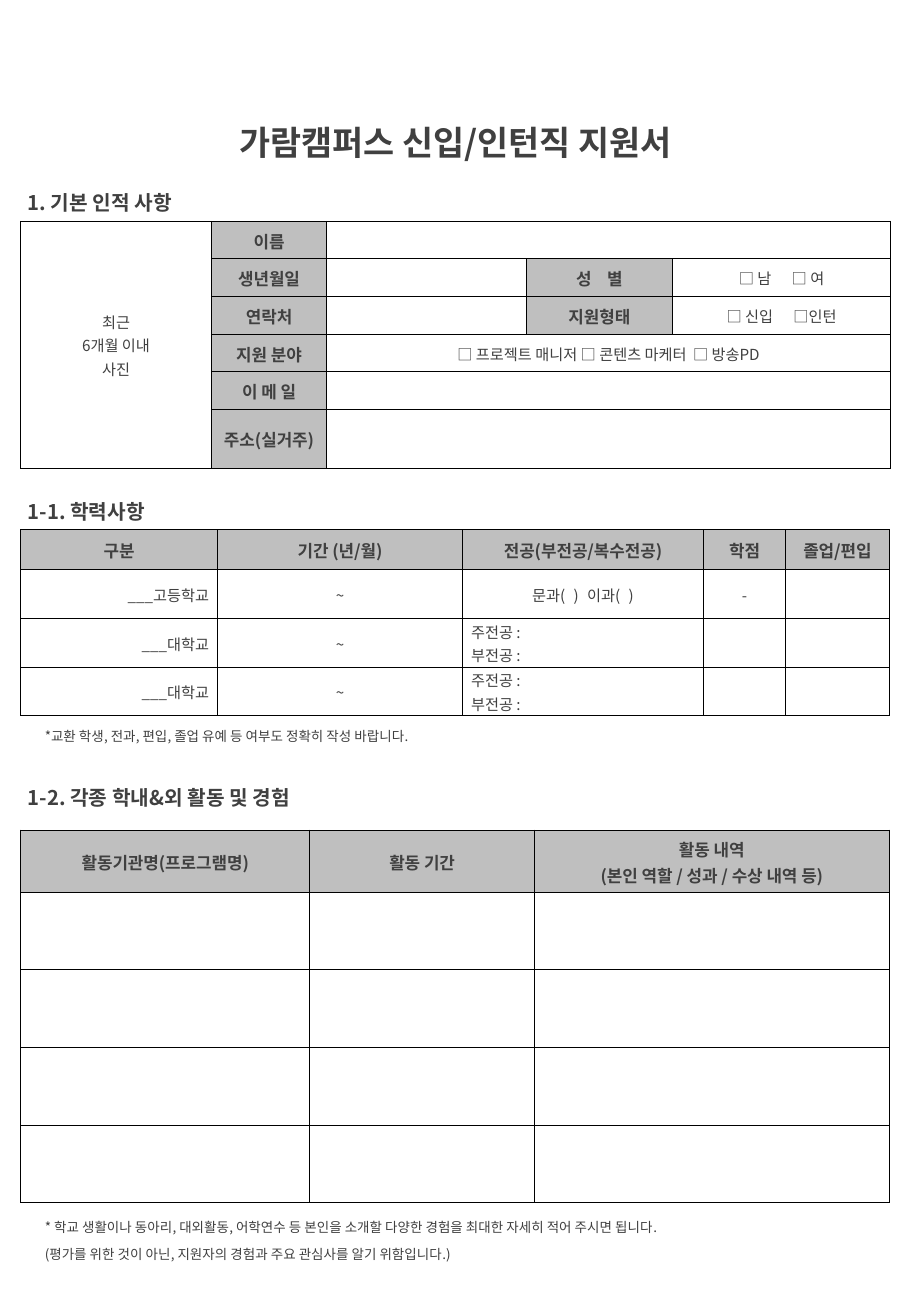
from lxml import etree
from pptx import Presentation
from pptx import util as u
from pptx.dml.color import RGBColor
from pptx.enum import text
from pptx.oxml import ns

PX = 9144
FONT = "Noto Sans CJK KR"
COLORS = {"ink": "404040", "label": "BFBFBF", "border": "000000"}
LEFT, CENTER, RIGHT, JUSTIFY = (
    text.PP_ALIGN.LEFT, text.PP_ALIGN.CENTER, text.PP_ALIGN.RIGHT, text.PP_ALIGN.JUSTIFY)


def px(value):
    return u.Emu(value * PX)


class Form:
    def __init__(self, width, height):
        self.deck = Presentation()
        self.deck.slide_width, self.deck.slide_height = px(width), px(height)
        self.page = self.deck.slides.add_slide(self.deck.slide_layouts[5])

    def style(self, span, size, bold):
        span.font.size, span.font.bold, span.font.name = u.Pt(size), bold, FONT
        span.font.color.rgb = RGBColor.from_string(COLORS["ink"])
        east = etree.SubElement(span._r.get_or_add_rPr(), ns.qn("a:ea"))
        east.set("typeface", FONT)

    def set_text(self, frame, wording, size, bold, align):
        frame.text = wording
        frame.word_wrap = True
        for para in frame.paragraphs:
            para.alignment = align
            for span in para.runs:
                self.style(span, size, bold)

    def title(self, wording, x, y, width, height):
        box = self.page.shapes.title
        box.left, box.top, box.width, box.height = map(px, (x, y, width, height))
        self.set_text(box.text_frame, wording, 20, True, CENTER)
        box.text_frame.vertical_anchor = text.MSO_ANCHOR.MIDDLE
        box.text_frame.auto_size = text.MSO_AUTO_SIZE.SHAPE_TO_FIT_TEXT

    def box(self, wording, x, y, width, height, size, bold, align):
        box = self.page.shapes.add_textbox(*map(px, (x, y, width, height)))
        self.set_text(box.text_frame, wording, size, bold, align)
        box.text_frame.auto_size = text.MSO_AUTO_SIZE.SHAPE_TO_FIT_TEXT
        return box.text_frame

    def heading(self, wording, y, width):
        self.box(wording, 13, y, width, 30, 12, True, JUSTIFY)

    def note(self, wording, y, height, spacing):
        frame = self.box(wording, 17, y, 715, height, 8, False, LEFT)
        for para in frame.paragraphs:
            para.line_spacing, para.space_after = spacing, u.Pt(8)
            para._p.get_or_add_pPr().set("indent", str(px(10)))

    def border(self, cell):
        props = cell._tc.get_or_add_tcPr()
        for index, side in enumerate(("lnL", "lnR", "lnT", "lnB")):
            line = etree.Element(ns.qn(f"a:{side}"), w=str(u.Pt(0.5)))
            fill = etree.SubElement(line, ns.qn("a:solidFill"))
            etree.SubElement(fill, ns.qn("a:srgbClr"), val=COLORS["border"])
            props.insert(index, line)

    def cell(self, cell, wording, label, align, gap):
        cell.margin_left = cell.margin_right = px(7)
        cell.margin_top = cell.margin_bottom = 0
        cell.vertical_anchor = text.MSO_ANCHOR.MIDDLE
        if label:
            cell.fill.solid()
            cell.fill.fore_color.rgb = RGBColor.from_string(COLORS["label"])
        else:
            cell.fill.background()
        self.border(cell)
        size = 10 if label else 9
        if not wording:
            para = cell.text_frame.paragraphs[0]
            etree.SubElement(para._p, ns.qn("a:endParaRPr"), sz=str(size * 100))
            return
        self.set_text(cell.text_frame, wording.replace("|", " "), size, label, align)
        for para in cell.text_frame.paragraphs:
            para.line_spacing = 1.07
        if "|" in wording:
            self.widen(cell.text_frame.paragraphs[0], wording, size, label, gap)

    def widen(self, para, wording, size, bold, gap):
        para.clear()
        for index, part in enumerate(wording.split("|")):
            for piece in ([" "] if index else []) + [part]:
                span = para.add_run()
                span.text = piece
                self.style(span, size, bold)
                if piece == " ":
                    span._r.get_or_add_rPr().set("spc", str(gap * 100))

    def table(self, y, widths, heights, labels, entries=None, merges=(), aligns=None, gaps=None):
        entries, aligns, gaps = entries or {}, aligns or {}, gaps or {}
        frame = self.page.shapes.add_table(
            len(heights), len(widths), px(17), px(y), px(sum(widths)), px(sum(heights)))
        grid = frame.table
        grid.first_row = grid.horz_banding = False
        for column, width in zip(grid.columns, widths):
            column.width = px(width)
        for row, height in zip(grid.rows, heights):
            row.height = px(height)
        for start, end in merges:
            grid.cell(*start).merge(grid.cell(*end))
        for row in range(len(heights)):
            for col in range(len(widths)):
                spot = row, col
                self.cell(grid.cell(*spot), labels.get(spot) or entries.get(spot),
                          spot in labels, aligns.get(spot, CENTER), gaps.get(spot, 2))


def main():
    form = Form(750, 1083)
    form.title("가람캠퍼스 신입/인턴직 지원서", -1, 95, 752, 44)

    form.heading("1. 기본 인적 사항", 152, 242)
    personal = ["이름", "생년월일", "연락처", "지원 분야", "이 메 일", "주소(실거주)"]
    labels = {(row, 1): name for row, name in enumerate(personal)}
    labels.update({(1, 3): "성|별", (2, 3): "지원형태"})
    form.table(
        182, [157, 95, 164, 121, 179], [31] * 6, labels,
        {(0, 0): "최근\n6개월 이내\n사진", (1, 4): "□ 남|□ 여", (2, 4): "□ 신입|□인턴",
         (3, 2): "□ 프로젝트 매니저 □ 콘텐츠 마케터|□ 방송PD"},
        merges=[((0, 0), (5, 0))] + [((row, 2), (row, 4)) for row in (0, 3, 4, 5)],
        gaps={(1, 3): 7, (1, 4): 10, (2, 4): 10})

    form.heading("1-1. 학력사항", 406, 200)
    headers = ["구분", "기간 (년/월)", "전공(부전공/복수전공)", "학점", "졸업/편입"]
    entries = {(1, 0): "___고등학교", (1, 2): "문과(|)|이과(|)", (1, 3): "-"}
    for row in (2, 3):
        entries.update({(row, 0): "___대학교", (row, 2): "주전공 :\n부전공 :"})
    entries.update({(row, 1): "~" for row in (1, 2, 3)})
    aligns = {(row, 0): RIGHT for row in (1, 2, 3)}
    aligns.update({(row, 2): LEFT for row in (2, 3)})
    form.table(436, [162, 202, 198, 68, 85], [33, 40, 40, 40],
               {(0, col): name for col, name in enumerate(headers)}, entries, aligns=aligns,
               gaps={(1, 2): 3})
    form.note("*교환 학생, 전과, 편입, 졸업 유예 등 여부도 정확히 작성 바랍니다.", 591, 25, u.Pt(12))

    form.heading("1-2. 각종 학내&외 활동 및 경험", 641, 635)
    headers = ["활동기관명(프로그램명)", "활동 기간", "활동 내역\n(본인 역할 / 성과 / 수상 내역 등)"]
    form.table(683, [238, 185, 292], [51] + [64] * 4,
               {(0, col): name for col, name in enumerate(headers)})
    form.note("* 학교 생활이나 동아리, 대외활동, 어학연수 등 본인을 소개할 다양한 경험을 "
              "최대한 자세히 적어 주시면 됩니다.\n"
              "(평가를 위한 것이 아닌, 지원자의 경험과 주요 관심사를 알기 위함입니다.)",
              1000, 48, 0.85)

    form.deck.save("out.pptx")


if __name__ == "__main__":
    main()
